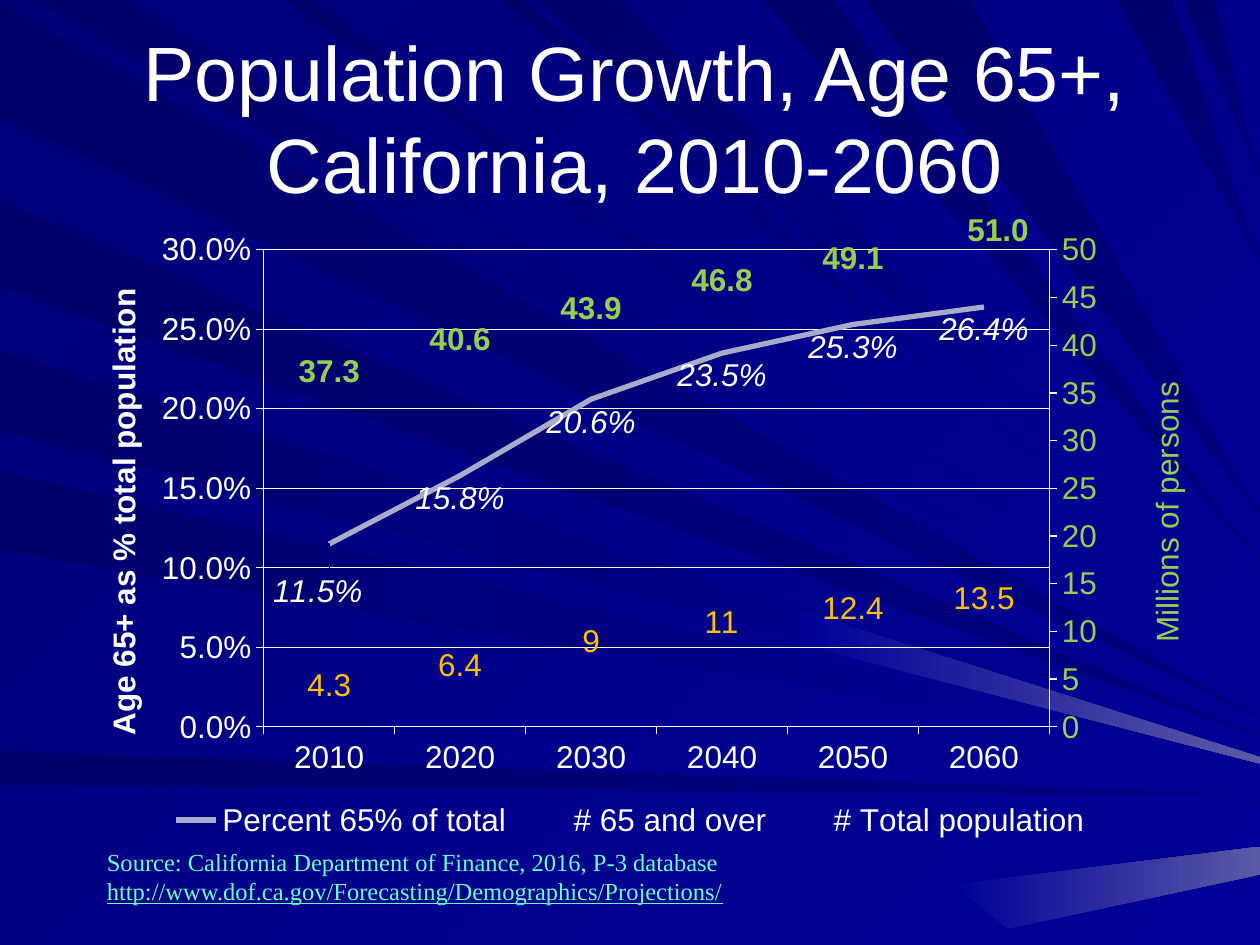
from copy import deepcopy

from pptx import Presentation
from pptx.chart.axis import CategoryAxis, ValueAxis
from pptx.chart.data import CategoryChartData
from pptx.dml.color import RGBColor
from pptx.enum.chart import XL_CHART_TYPE, XL_LABEL_POSITION, XL_LEGEND_POSITION, XL_TICK_MARK
from pptx.enum.text import MSO_ANCHOR, PP_ALIGN
from pptx.oxml import parse_xml
from pptx.oxml.ns import nsdecls, qn
from pptx.util import Inches, Pt

LINE = XL_CHART_TYPE.LINE
BELOW, CENTER_LABEL = XL_LABEL_POSITION.BELOW, XL_LABEL_POSITION.CENTER
BOTTOM = XL_LEGEND_POSITION.BOTTOM
OUTSIDE = XL_TICK_MARK.OUTSIDE
MIDDLE, TOP = MSO_ANCHOR.MIDDLE, MSO_ANCHOR.TOP
CENTER, LEFT = PP_ALIGN.CENTER, PP_ALIGN.LEFT

WHITE, GREEN, GOLD, MINT = "FFFFFF", "92D050", "FFC000", "66FFCC"
DARK, NAVY, BLUE, PALE = "00006B", "000080", "000099", "5A5AA6"

LEFT_RAYS = [
    (0.02, 0.93, 5.7, NAVY),
    (5.96, 6.23, 6.31, NAVY),
    (1.59, 2.28, 5.85, NAVY),
    (2.78, 3.42, 6, BLUE),
    (3.74, 4.37, 6.05, BLUE),
]
TOP_RAYS = [
    (0.26, 1.01, 5.63, BLUE),
    (2.25, 2.47, 5.5, BLUE),
    (3.98, 4.16, 5.18, BLUE),
    (4.26, 4.92, 4.93, BLUE),
    (6.06, 6.61, 4.46, NAVY),
    (6.86, 7.7, 4.1, NAVY),
    (8.87, 9.3, 2.1, NAVY),
    (9.39, 9.64, 1.4, NAVY),
]
PALE_RAYS = [
    [(7.56, 7.02), (10, 6.72), (10, 6.94), (8, 7.37)],
    [(6.37, 4.85), (10, 6.01), (10, 6.06), (6.33, 5.11)],
]

YEARS = [str(year) for year in range(2010, 2070, 10)]
SERIES = [
    ("Percent 65% of total", [0.115, 0.158, 0.206, 0.235, 0.253, 0.264], "0.0%"),
    ("# 65 and over", [4.3, 6.4, 9, 11, 12.4, 13.5], "General"),
    ("# Total population", [37.3, 40.6, 43.9, 46.8, 49.1, 51], "General"),
]


def color(value):
    return RGBColor.from_string(value)


def set_layout(parent, index, edge=True, **values):
    for old in parent.findall(qn("c:layout")):
        parent.remove(old)
    parts = '<c:layoutTarget val="inner"/>' if "w" in values else ""
    if edge:
        parts += '<c:xMode val="edge"/><c:yMode val="edge"/>'
    parts += "".join(f'<c:{key} val="{value}"/>' for key, value in values.items())
    xml = f'<c:layout {nsdecls("c")}><c:manualLayout>{parts}</c:manualLayout></c:layout>'
    parent.insert(index, parse_xml(xml))


class SlideBuilder:
    face = "Arial"

    def __init__(self, page):
        self.page = page

    def font(self, font, size=18, tone=WHITE, bold=False, italic=False, face=None):
        font.name, font.size = face or self.face, Pt(size)
        font.bold, font.italic = bold, italic
        font.color.rgb = color(tone)

    def gradient(self, fill, start, end, angle):
        fill.gradient()
        fill.gradient_angle = -angle % 360
        for stop, tone in zip(fill.gradient_stops, (start, end)):
            stop.color.rgb = color(tone)

    def ray(self, points, start, end, angle):
        corners = [(Inches(x), Inches(y)) for x, y in points]
        builder = self.page.shapes.build_freeform(*corners[0])
        builder.add_line_segments(corners[1:], close=True)
        shape = builder.convert_to_shape()
        shape.shadow.inherit = False
        shape.line.fill.background()
        self.gradient(shape.fill, start, end, angle)

    def backdrop(self):
        self.gradient(self.page.background.fill, "000078", BLUE, 45)
        for top, bottom, end, tone in LEFT_RAYS:
            self.ray([(0, top), (10, end), (0, bottom)], DARK, tone, 0)
        for left, right, end, tone in TOP_RAYS:
            self.ray([(left, 0), (right, 0), (10, end)], DARK, tone, 45)
        for points in PALE_RAYS:
            self.ray(points, BLUE, PALE, 0)

    def text(self, place, lines, align=LEFT, anchor=TOP, wrap=False, **style):
        box = self.page.shapes.add_textbox(*map(Inches, place))
        frame = box.text_frame
        frame.word_wrap, frame.vertical_anchor = wrap, anchor
        frame.text = "\n".join(lines)
        for para in frame.paragraphs:
            para.alignment = align
            self.font(para.font, **style)
        return frame

    def axis(self, axis, tone=WHITE):
        axis.major_tick_mark = OUTSIDE
        axis.format.line.color.rgb = color(WHITE)
        axis.format.line.width = Pt(0.75)
        self.font(axis.tick_labels.font, tone=tone)

    def value_axis(self, element, title, top, step, code, tone, bold, x, y):
        axis = ValueAxis(element)
        self.axis(axis, tone)
        axis.minimum_scale, axis.maximum_scale, axis.major_unit = 0, top, step
        axis.tick_labels.number_format = code
        axis.tick_labels.number_format_is_linked = False
        frame = axis.axis_title.text_frame
        frame.text = title
        self.font(frame.paragraphs[0].font, tone=tone, bold=bold)
        heading = element.find(qn("c:title"))
        body = next(heading.iter(qn("a:bodyPr")))
        body.set("rot", "-5400000")
        body.set("vert", "horz")
        set_layout(heading, 1, x=x, y=y)
        return axis

    def labels(self, series, position, code, **style):
        labels = series.data_labels
        labels.show_value, labels.position = True, position
        labels.number_format, labels.number_format_is_linked = code, False
        self.font(labels.font, **style)

    def chart(self, place):
        data = CategoryChartData()
        data.categories = YEARS
        for series in SERIES:
            data.add_series(*series)
        chart = self.page.shapes.add_chart(LINE, *map(Inches, place), data).chart
        self.font(chart.font)
        chart.has_title = False
        chart.has_legend = True
        chart.legend.position, chart.legend.include_in_layout = BOTTOM, False
        self.font(chart.legend.font)
        chart.plots[0].vary_by_categories = False

        area = next(chart._chartSpace.iter(qn("c:plotArea")))
        left_plot, years, left = (area.find(qn(f"c:{tag}")) for tag in ("lineChart", "catAx", "valAx"))
        right_plot, hidden_years, right = map(deepcopy, (left_plot, years, left))
        left_plot.addnext(right_plot)
        left.addnext(right)
        right.addnext(hidden_years)
        for plot, kept in ((left_plot, slice(0, 1)), (right_plot, slice(1, 3))):
            all_series = plot.findall(qn("c:ser"))
            for series in all_series:
                if series not in all_series[kept]:
                    plot.remove(series)
        for item, number in zip(right_plot.findall(qn("c:axId")), ("501", "502")):
            item.set("val", number)
        for item, own, other in ((hidden_years, "501", "502"), (right, "502", "501")):
            item.find(qn("c:axId")).set("val", own)
            item.find(qn("c:crossAx")).set("val", other)
        right.find(qn("c:axPos")).set("val", "r")
        right.find(qn("c:crosses")).set("val", "max")
        CategoryAxis(hidden_years).visible = False

        set_layout(area, 0, x=0.177, y=0.047, w=0.693, h=0.765)
        self.axis(chart.category_axis)
        percent_axis = self.value_axis(left, "Age 65+ as % total population", 0.3, 0.05, "0.0%", WHITE, True, 0.03, 0.1)
        grid = percent_axis.major_gridlines.format.line
        grid.color.rgb, grid.width = color(WHITE), Pt(0.75)
        people_axis = self.value_axis(right, "Millions of persons", 50, 5, "General", GREEN, False, 0.95, 0.25)
        people_axis.has_major_gridlines = False

        share = chart.plots[0].series[0]
        share.smooth = False
        share.format.line.color.rgb, share.format.line.width = color("AAAACA"), Pt(3)
        self.labels(share, BELOW, "0.0%", italic=True)
        first = share.points[0].data_label
        self.font(first.font, italic=True)
        first.position = BELOW
        set_layout(next(area.iter(qn("c:dLbl"))), 1, edge=False, x=-0.01, y=0.04)
        for series, tone, bold in zip(chart.plots[1].series, (GOLD, GREEN), (False, True)):
            series.smooth = False
            series.format.line.fill.background()
            self.labels(series, CENTER_LABEL, "General", tone=tone, bold=bold)


def main():
    deck = Presentation()
    deck.slide_width, deck.slide_height = Inches(10), Inches(7.5)
    slide = SlideBuilder(deck.slides.add_slide(deck.slide_layouts[6]))
    slide.backdrop()
    slide.text((0.33, 0.3, 9.42, 1.25), ["Population Growth, Age 65+, California, 2010-2060"],
               CENTER, MIDDLE, wrap=True, size=44)
    slide.chart((0.5, 1.75, 9, 4.95))
    source = slide.text((0.75, 6.67, 5.13, 0.57), [
        "Source: California Department of Finance, 2016, P-3 database",
        "http://www.dof.ca.gov/Forecasting/Demographics/Projections/",
    ], size=14, tone=MINT, face="Times New Roman")
    source.paragraphs[1].font.underline = True
    slide.text((7.58, 1.62, 0.69, 0.4), ["51.0"], tone=GREEN, bold=True)
    deck.save("out.pptx")


if __name__ == "__main__":
    main()
